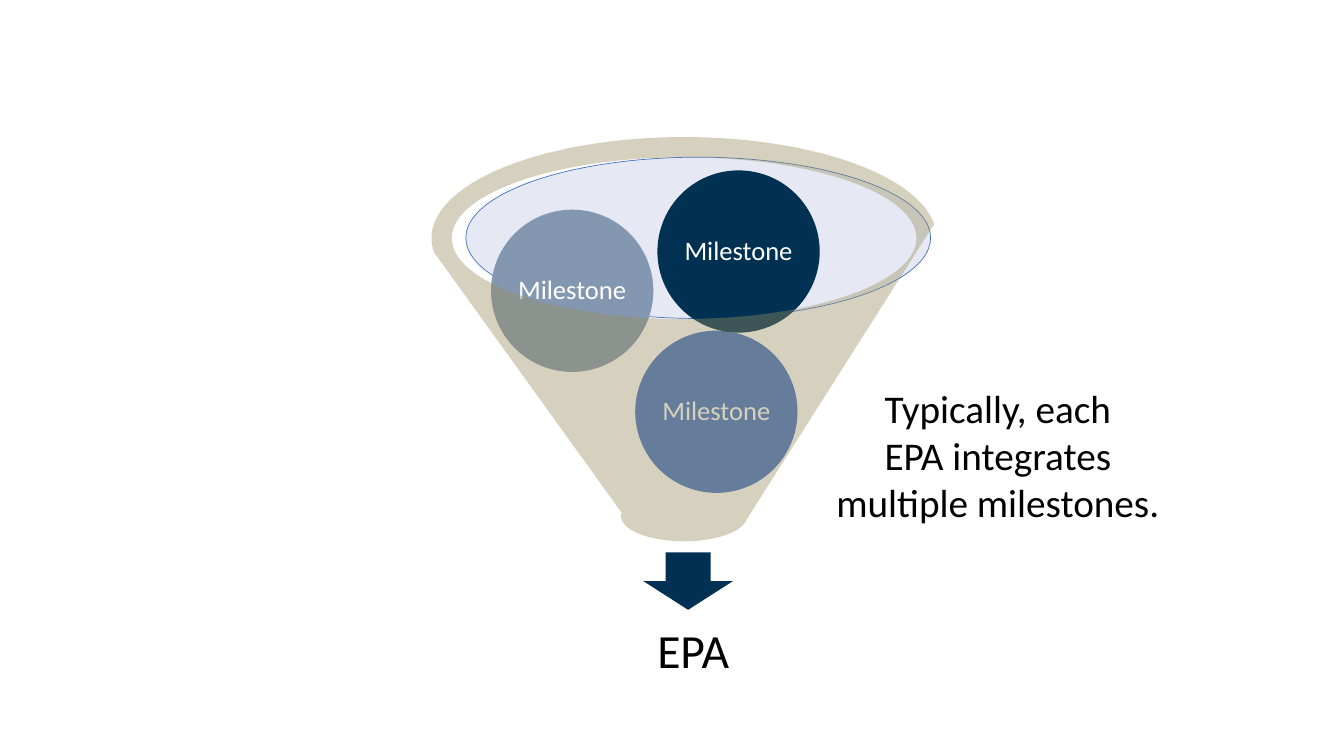
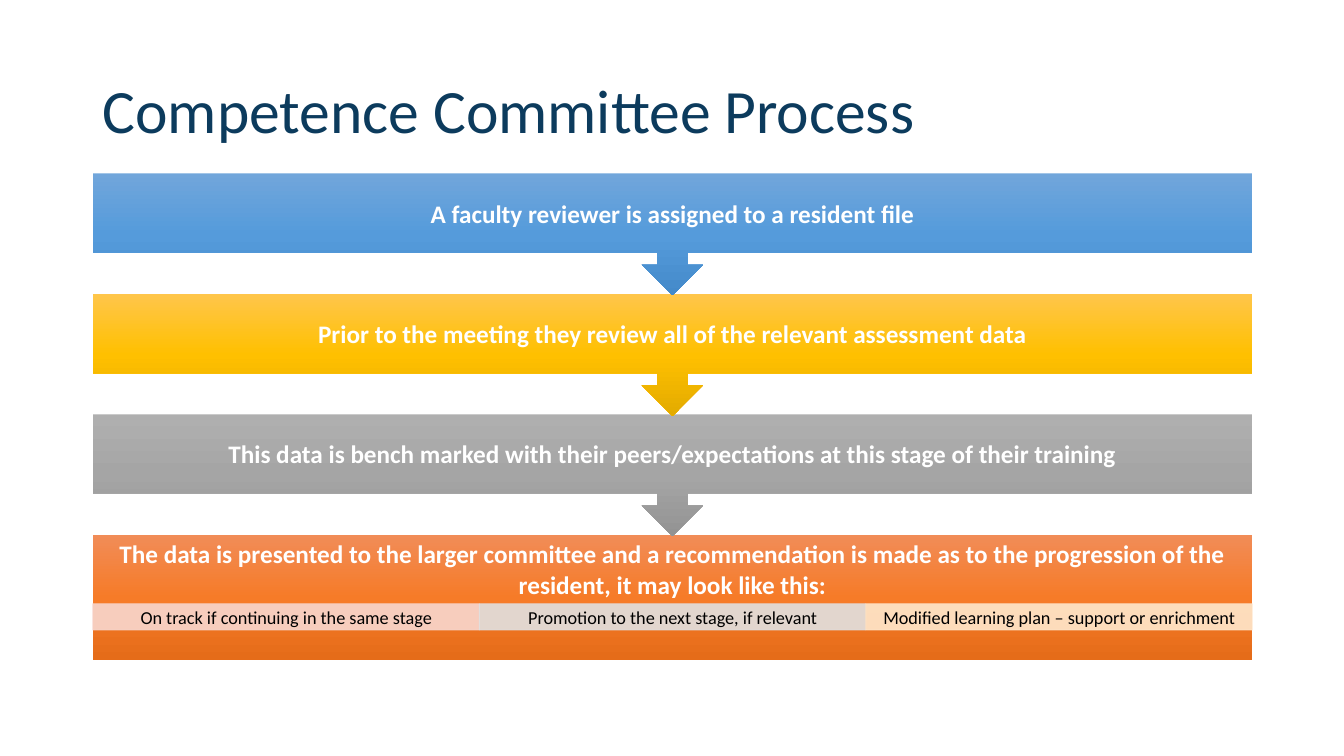
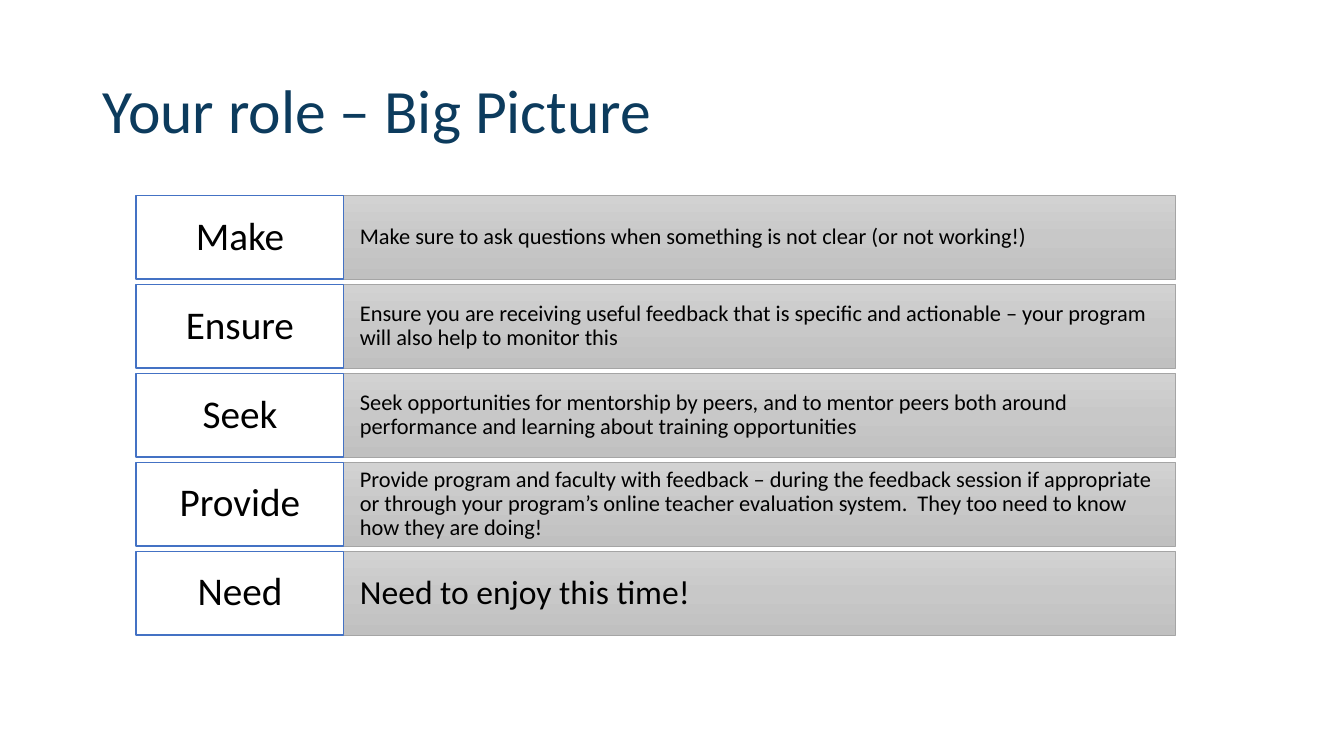
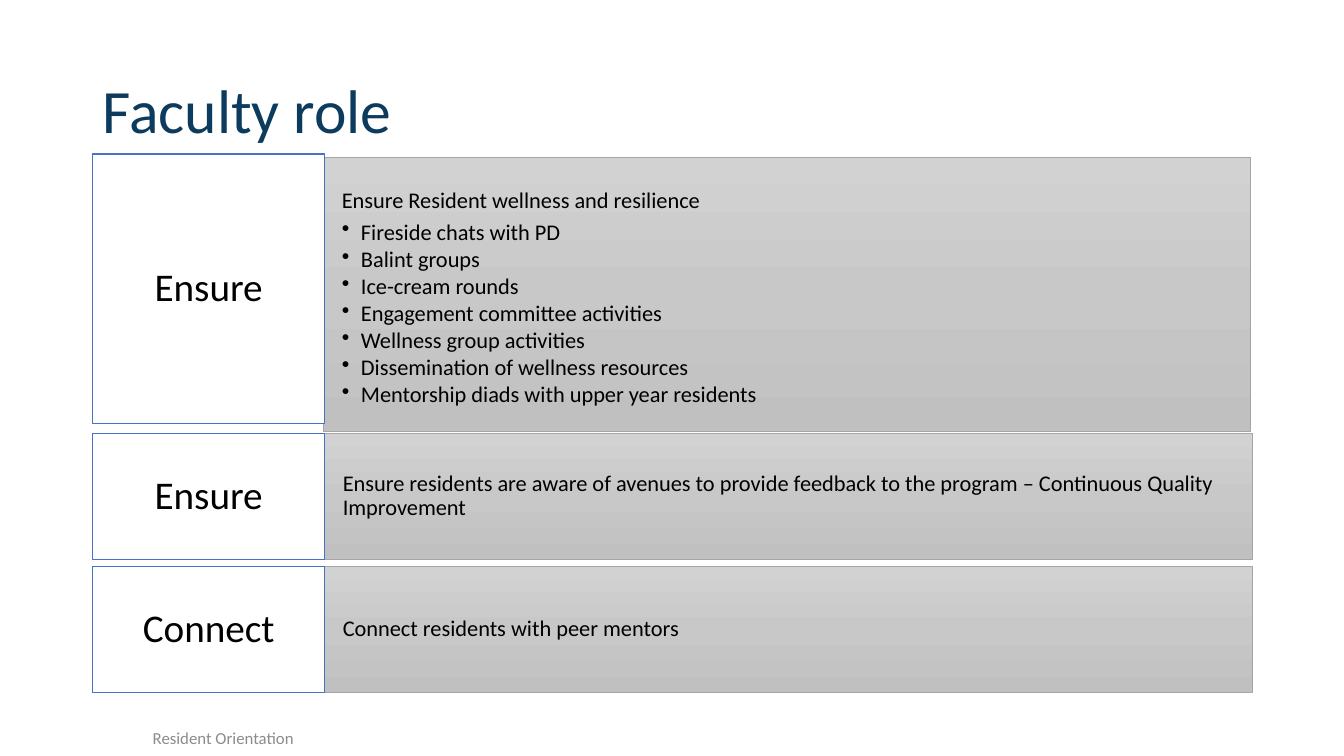
from dataclasses import dataclass

from lxml.etree import SubElement
from pptx import Presentation
from pptx.dml.color import RGBColor
from pptx.enum.shapes import MSO_SHAPE
from pptx.enum.text import MSO_ANCHOR, PP_ALIGN
from pptx.oxml.ns import qn
from pptx.util import Inches, Pt


@dataclass(frozen=True)
class Theme:
    font: str = "Calibri"
    # Colours
    ink: str = "000000"
    white: str = "FFFFFF"
    title: str = "0C3B5D"
    footer: str = "8C8C8C"
    navy: str = "003152"
    blue: str = "4472C4"
    slate: str = "8497B0"
    sand: str = "998D5F"
    funnel_mouth: str = "C1C9E4"
    panel_line: str = "A5A5A5"
    # Gradients, top to bottom
    panel: tuple = ("D2D2D2", "C8C8C8", "C0C0C0")
    sky_blue: tuple = ("71A6DB", "559BDB", "448ACA")
    amber: tuple = ("FFC64B", "FFC000", "E3AB00")
    gray: tuple = ("AFAFAF", "A5A5A5", "939393")
    orange: tuple = ("F18C57", "F67B28", "E56C19")
    # Type sizes in points
    title_size: int = 44
    result_size: int = 34
    label_size: int = 28
    emphasis_size: int = 24
    ball_size: int = 19
    step_size: int = 18
    body_size: int = 16
    outcome_size: int = 13
    footer_size: int = 12


THEME = Theme()
LEFT, WIDTH = 0.92, 11.5


# Painting helpers
def paint(fill, color, alpha=100):
    fill.solid()
    fill.fore_color.rgb = RGBColor.from_string(color)
    if alpha < 100:
        solid = fill._xPr.find(qn("a:solidFill"))
        SubElement(solid[0], qn("a:alpha"), val=str(alpha * 1000))


def paint_gradient(shape, colors):
    shape.fill.gradient()
    shape.fill.gradient_angle = 270
    stops = shape._element.spPr.find(qn("a:gradFill")).find(qn("a:gsLst"))
    for stop in list(stops):
        stops.remove(stop)
    for index, color in enumerate(colors):
        stop = SubElement(stops, qn("a:gs"), pos=str(index * 50000))
        SubElement(stop, qn("a:srgbClr"), val=color)


def add_figure(slide, kind, box, fill, line=None, line_width=0.5, alpha=100, line_alpha=100):
    figure = slide.shapes.add_shape(kind, *map(Inches, box))
    figure.shadow.inherit = False
    if isinstance(fill, tuple):
        paint_gradient(figure, fill)
    else:
        paint(figure.fill, fill, alpha)
    if line:
        figure.line.width = Pt(line_width)
        paint(figure.line.fill, line, line_alpha)
    else:
        figure.line.fill.background()
    return figure


# Text helpers
def style(paragraph, size, color, align=PP_ALIGN.LEFT, bold=False, spacing=None):
    paragraph.alignment = align
    paragraph.line_spacing = spacing
    font = paragraph.font
    font.name, font.size, font.bold = THEME.font, Pt(size), bold
    font.color.rgb = RGBColor.from_string(color)


def write(shape, text, size, color=THEME.ink, align=PP_ALIGN.CENTER, bold=False,
          spacing=0.9, insets=(0.1, 0.05, 0.1, 0.05), anchor=MSO_ANCHOR.MIDDLE):
    frame = shape.text_frame
    frame.word_wrap = True
    frame.vertical_anchor = anchor
    (frame.margin_left, frame.margin_top,
     frame.margin_right, frame.margin_bottom) = map(Inches, insets)
    frame.paragraphs[0].text = text
    style(frame.paragraphs[0], size, color, align, bold, spacing)
    return frame


def add_text(slide, box, text, size, **options):
    return write(slide.shapes.add_textbox(*map(Inches, box)), text, size, **options)


def add_title(slide, text):
    add_text(slide, (LEFT, 0.4, WIDTH, 1.45), text, THEME.title_size,
             color=THEME.title, align=PP_ALIGN.LEFT)


def add_bullets(frame, items):
    frame.paragraphs[0].space_after = Pt(5.2)
    for item in items:
        paragraph = frame.add_paragraph()
        paragraph.text = item
        paragraph.level = 1
        properties = paragraph._p.get_or_add_pPr()
        properties.set("marL", str(Inches(0.19)))
        properties.set("indent", str(-Inches(0.19)))
        SubElement(properties, qn("a:buChar"), char="•")
        style(paragraph, THEME.body_size, THEME.ink, spacing=0.9)
        paragraph.space_after = Pt(2.1)


# A white label beside a gray panel
def add_role(slide, label, text, label_box, panel_box, size=THEME.body_size,
             inset=0.16, anchor=MSO_ANCHOR.MIDDLE):
    panel = add_figure(slide, MSO_SHAPE.RECTANGLE, panel_box, THEME.panel, THEME.panel_line)
    top_inset = 0.32 if anchor == MSO_ANCHOR.TOP else 0.04
    frame = write(panel, text, size, align=PP_ALIGN.LEFT, anchor=anchor,
                  insets=(inset, top_inset, inset, top_inset))
    tag = add_figure(slide, MSO_SHAPE.RECTANGLE, label_box, THEME.white, THEME.blue, 1)
    write(tag, label, THEME.label_size)
    return frame


# Slides
def build_funnel(slide):
    add_text(slide, (7.44, 3.76, 5, 1.51),
             "Typically, each \vEPA integrates \vmultiple milestones. ",
             THEME.label_size, spacing=None, anchor=MSO_ANCHOR.TOP)
    add_figure(slide, MSO_SHAPE.OVAL, (4.62, 1.56, 4.61, 1.6), THEME.funnel_mouth,
               THEME.blue, alpha=40)
    add_figure(slide, MSO_SHAPE.DOWN_ARROW, (6.38, 5.48, 0.89, 0.57), THEME.navy)
    add_text(slide, (4.73, 5.94, 4.29, 1.07), "EPA", THEME.result_size)
    for left, top, color in ((6.3, 3.28, THEME.blue), (4.87, 2.08, THEME.slate),
                             (6.52, 1.69, THEME.navy)):
        ball = add_figure(slide, MSO_SHAPE.OVAL, (left, top, 1.61, 1.61), color)
        write(ball, "Milestone", THEME.ball_size, THEME.white, insets=(0.03,) * 4)
    # The translucent funnel lies over the balls
    add_figure(slide, MSO_SHAPE.FUNNEL, (4.28, 1.36, 5.01, 4.01), THEME.sand, alpha=40)


def build_process(slide):
    add_title(slide, "Competence Committee Process")

    # Final step with its possible outcomes
    decision = add_figure(slide, MSO_SHAPE.RECTANGLE, (LEFT, 5.31, WIDTH, 1.24), THEME.orange)
    write(decision, "The data is presented to the larger committee and a recommendation is made "
          "as to the progression of the resident, it may look like this:",
          THEME.step_size, THEME.white, bold=True, spacing=None,
          insets=(0.14, 0.02, 0.14, 0.59))
    outcomes = (
        ("On track if continuing in the same stage", "F8D7CE"),
        ("Promotion to the next stage, if relevant", "E1E1E1"),
        ("Modified learning plan – support or enrichment", "FFE8CC"),
    )
    outcome_width = WIDTH / len(outcomes)
    for index, (text, color) in enumerate(outcomes):
        outcome = add_figure(slide, MSO_SHAPE.RECTANGLE,
                             (LEFT + index * outcome_width, 5.99, outcome_width, 0.26),
                             color, color, alpha=90, line_alpha=90)
        write(outcome, text, THEME.outcome_size, spacing=None, insets=(0.1, 0.02, 0.1, 0.02))

    # Earlier steps, last first, so that each arrow tip lies over the next step
    steps = (
        ("A faculty reviewer is assigned to a resident file", THEME.sky_blue),
        ("Prior to the meeting they review all of the relevant assessment data", THEME.amber),
        ("This data is bench marked with their peers/expectations at this stage of their training",
         THEME.gray),
    )
    for index, (text, colors) in reversed(list(enumerate(steps))):
        step = add_figure(slide, MSO_SHAPE.DOWN_ARROW_CALLOUT,
                          (LEFT, 1.72 + index * 1.195, WIDTH, 1.21), colors)
        write(step, text, THEME.step_size, THEME.white, bold=True, spacing=None,
              insets=(0.14,) * 4)


def build_your_role(slide):
    add_title(slide, "Your role – Big Picture")
    roles = (
        ("Make", "Make sure to ask questions when something is not clear (or not working!)",
         THEME.body_size),
        ("Ensure", "Ensure you are receiving useful feedback that is specific and actionable – "
         "your program will also help to monitor this", THEME.body_size),
        ("Seek", "Seek opportunities for mentorship by peers, and to mentor peers both around "
         "performance and learning about training opportunities", THEME.body_size),
        ("Provide", "Provide program and faculty with feedback – during the feedback session if "
         "appropriate or through your program’s online teacher evaluation system.  They too "
         "need to know how they are doing!", THEME.body_size),
        ("Need", "Need to enjoy this time!", THEME.emphasis_size),
    )
    for index, (label, text, size) in enumerate(roles):
        top = 1.94 + index * 0.8825
        add_role(slide, label, text, (1.35, top, 2.06, 0.83), (3.41, top, 8.25, 0.83), size)


def build_faculty_role(slide):
    add_title(slide, "Faculty role")
    wellness = add_role(slide, "Ensure", "Ensure Resident wellness and resilience",
                        (LEFT, 1.53, 2.3, 2.67), (3.21, 1.56, 9.19, 2.72),
                        inset=0.18, anchor=MSO_ANCHOR.TOP)
    add_bullets(wellness, (
        "Fireside chats with PD",
        "Balint groups",
        "Ice-cream rounds",
        "Engagement committee activities",
        "Wellness group activities",
        "Dissemination of wellness resources",
        "Mentorship diads with upper year residents",
    ))
    for top, label, text in (
        (4.3, "Ensure", "Ensure residents are aware of avenues to provide feedback to the "
         "program – Continuous Quality Improvement"),
        (5.62, "Connect", "Connect residents with peer mentors"),
    ):
        add_role(slide, label, text, (LEFT, top, 2.3, 1.25), (3.22, top, 9.2, 1.25), inset=0.18)
    add_text(slide, (0, 7.14, 4.43, 0.35), "Resident Orientation", THEME.footer_size,
             color=THEME.footer, spacing=None)


def main():
    deck = Presentation()
    deck.slide_width, deck.slide_height = Inches(13.33), Inches(7.5)
    for build in (build_funnel, build_process, build_your_role, build_faculty_role):
        build(deck.slides.add_slide(deck.slide_layouts[6]))
    deck.save("out.pptx")


if __name__ == "__main__":
    main()
